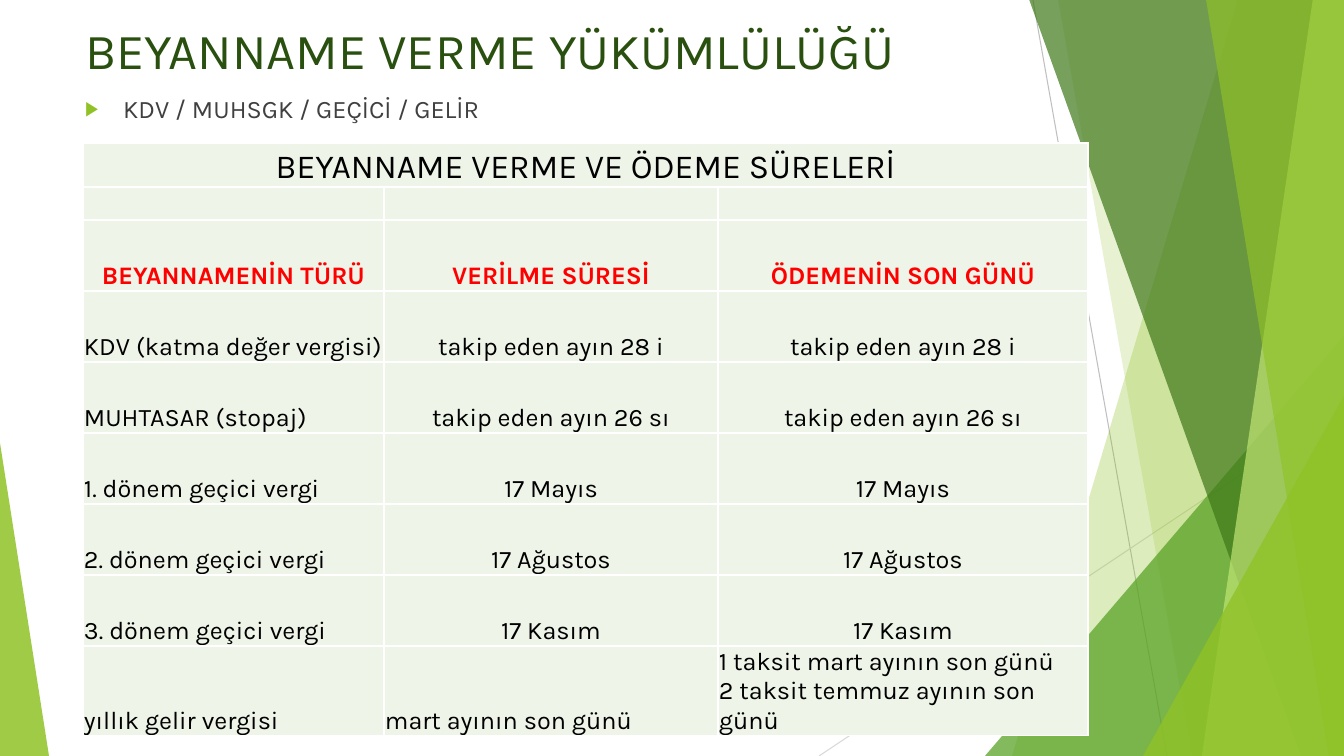
from lxml import etree
from pptx import Presentation
from pptx import util as u
from pptx.dml.color import RGBColor
from pptx.enum import shapes, text
from pptx.oxml.ns import qn

W, H = 1344, 756
FONT = "Karla"
C = {"title": "2A5010", "body": "404040", "lime": "90C226", "green": "54A021",
     "forest": "3F7819", "pale": "C0E474", "cell": "EEF4E8", "white": "FFFFFF",
     "black": "000000", "red": "FF0000", "grey": "BFBFBF", "light": "D9D9D9"}

TITLE = "BEYANNAME VERME YÜKÜMLÜLÜĞÜ"
BULLET = "KDV / MUHSGK / GEÇİCİ / GELİR"
ROWS = [
    ("BEYANNAME VERME VE ÖDEME SÜRELERİ", "", ""),
    ("", "", ""),
    ("BEYANNAMENİN TÜRÜ", "VERİLME SÜRESİ", "ÖDEMENİN SON GÜNÜ"),
    ("KDV (katma değer vergisi)", "takip eden ayın 28 i", "takip eden ayın 28 i"),
    ("MUHTASAR (stopaj)", "takip eden ayın 26 sı", "takip eden ayın 26 sı"),
    ("1. dönem geçici vergi", "17 Mayıs", "17 Mayıs"),
    ("2. dönem geçici vergi", "17 Ağustos", "17 Ağustos"),
    ("3. dönem geçici vergi", "17 Kasım", "17 Kasım"),
    ("yıllık gelir vergisi", "mart ayının son günü",
     "1 taksit mart ayının son günü\n2 taksit temmuz ayının son günü"),
]
COL_W = [301, 334, 370]
ROW_H = [44, 33] + [71] * 7
HEADER = 2
LAST = len(ROWS) - 1

LINES = [((1033, 0), (1167, H), "grey"), ((W, 406), (819, H), "light")]
# Bands reach the right edge: left x at the top, left x at the bottom, colour, opacity
BACK_BANDS = [(1238, 1012, "lime", 30), (1058, 1192, "lime", 20)]
FRONT_BANDS = [(1029, 1301, "forest", 70), (1313, 1202, "pale", 70),
               (1206, 1329, "lime", 65)]
# Triangles: left, top, width, height, apex position, colour, opacity
BACK_TRIANGLE = (985, 336, 359, 420, 1, "green", 72)
FRONT_TRIANGLES = [(1143, 396, 201, 360, 1, "lime", 80),
                   (0, 443, 49, 313, 0, "lime", 85)]


def px(n):
    return u.Emu(round(n * 12192000 / W))


def rgb(name):
    return RGBColor.from_string(C[name])


def sub(parent, tag, **attrs):
    return etree.SubElement(parent, qn(tag), attrs)


def write(tf, content, size=18, color="black", bold=False, align="LEFT"):
    """Fill the first paragraph; a newline becomes a line break."""
    p = tf.paragraphs[0]
    p.alignment = getattr(text.PP_ALIGN, align)
    p.space_before = u.Pt(0)
    for i, line in enumerate(content.split("\n")):
        if i:
            p.add_line_break()
        r = p.add_run()
        r.text = line
        r.font.name, r.font.size, r.font.bold = FONT, u.Pt(size), bold
        r.font.color.rgb = rgb(color)
    return p


def paint(sp, color, opacity):
    sp.shadow.inherit = False
    sp.line.fill.background()
    sp.fill.solid()
    sp.fill.fore_color.rgb = rgb(color)
    clr = sp._element.spPr.find(".//" + qn("a:srgbClr"))
    sub(clr, "a:alpha", val=str(opacity * 1000))


def band(s, top_x, bottom_x, color, opacity):
    fb = s.shapes.build_freeform(top_x, -1, scale=px(1))
    fb.add_line_segments([(W, -1), (W, H), (bottom_x, H)], close=True)
    paint(fb.convert_to_shape(), color, opacity)


def triangle(s, x, y, w, h, apex, color, opacity):
    sp = s.shapes.add_shape(shapes.MSO_SHAPE.ISOSCELES_TRIANGLE,
                            px(x), px(y), px(w), px(h))
    sp.adjustments[0] = apex
    paint(sp, color, opacity)


def decorate(s):
    for start, end, color in LINES:
        cx = s.shapes.add_connector(shapes.MSO_CONNECTOR.STRAIGHT,
                                    *map(px, start + end))
        cx.line.color.rgb = rgb(color)
        cx.line.width = u.Pt(0.75)
        sub(cx._element.spPr, "a:effectLst")
    for b in BACK_BANDS:
        band(s, *b)
    triangle(s, *BACK_TRIANGLE)
    for b in FRONT_BANDS:
        band(s, *b)
    for t in FRONT_TRIANGLES:
        triangle(s, *t)


def place(ph, x, y, w, h, anchor):
    """Move a placeholder and bring it in front of the decoration."""
    ph.left, ph.top, ph.width, ph.height = map(px, (x, y, w, h))
    tf = ph.text_frame
    tf.word_wrap = True
    tf.auto_size = text.MSO_AUTO_SIZE.NONE
    tf.vertical_anchor = anchor
    ph._element.getparent().append(ph._element)
    return tf


def add_bullet(p):
    pPr = p._p.get_or_add_pPr()
    pPr.set("marL", str(px(38)))
    pPr.set("indent", str(-px(38)))
    sub(sub(pPr, "a:buClr"), "a:srgbClr", val=C["lime"])
    sub(pPr, "a:buSzPct", val="80000")
    sub(pPr, "a:buChar", char="▶")


def style_cell(cell):
    cell.margin_left = cell.margin_right = cell.margin_top = px(1)
    cell.margin_bottom = 0
    cell.vertical_anchor = text.MSO_ANCHOR.BOTTOM
    tcPr = cell._tc.get_or_add_tcPr()
    for side in ("a:lnL", "a:lnR", "a:lnT", "a:lnB"):
        ln = sub(tcPr, side, w=str(u.Pt(1)))
        sub(sub(ln, "a:solidFill"), "a:srgbClr", val=C["white"])
    cell.fill.solid()
    cell.fill.fore_color.rgb = rgb("cell")


def add_deadlines(s):
    table = s.shapes.add_table(len(ROWS), len(COL_W), px(83), px(143),
                               px(sum(COL_W)), px(sum(ROW_H))).table
    table.first_row = table.horz_banding = False
    for col, w in zip(table.columns, COL_W):
        col.width = px(w)
    for row, h in zip(table.rows, ROW_H):
        row.height = px(h)
    for i, row in enumerate(ROWS):
        for j, content in enumerate(row):
            cell = table.cell(i, j)
            style_cell(cell)
            if content:
                centred = i <= HEADER or (j > 0 and i < LAST)
                write(cell.text_frame, content, size=18 if i else 24,
                      color="red" if i == HEADER else "black",
                      bold=i == HEADER, align="CENTER" if centred else "LEFT")
    table.cell(0, 0).merge(table.cell(0, len(COL_W) - 1))


def main():
    prs = Presentation()
    prs.slide_width, prs.slide_height = px(W), px(H)
    s = prs.slides.add_slide(prs.slide_layouts[1])
    decorate(s)
    title, body = s.shapes.title, s.placeholders[1]
    write(place(title, 75, 10, 948, 78, text.MSO_ANCHOR.MIDDLE), TITLE,
          size=36, color="title")
    add_bullet(write(place(body, 75, 88, 979, 668, text.MSO_ANCHOR.TOP), BULLET,
                     color="body"))
    add_deadlines(s)
    prs.save("out.pptx")


if __name__ == "__main__":
    main()
